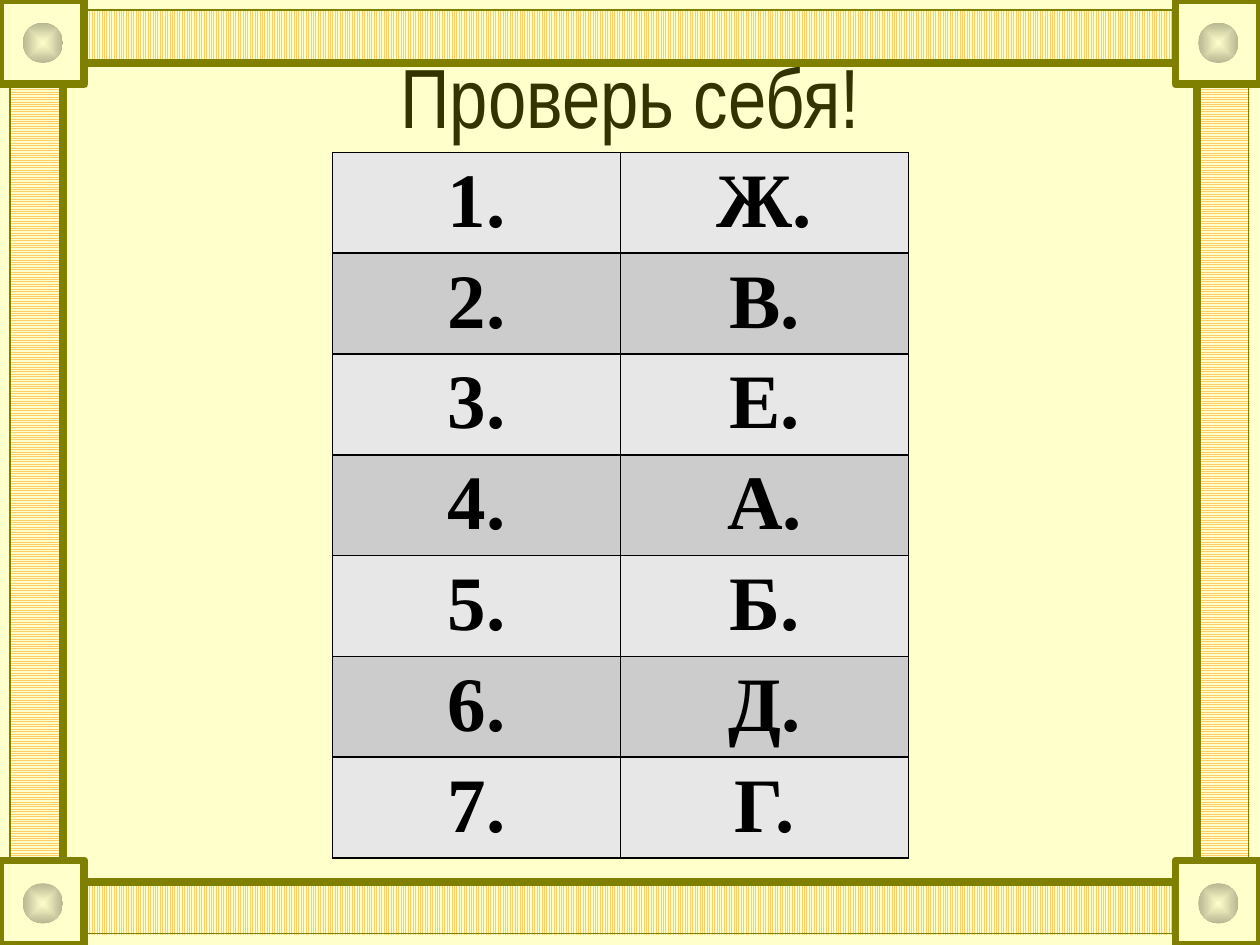
from itertools import product

from lxml.etree import SubElement
from pptx import Presentation
from pptx.dml.color import RGBColor
from pptx.enum.dml import MSO_PATTERN
from pptx.enum.shapes import MSO_SHAPE
from pptx.enum.text import MSO_ANCHOR, PP_ALIGN
from pptx.oxml import parse_xml
from pptx.oxml.ns import nsdecls, qn
from pptx.util import Inches, Pt

CREAM = RGBColor(0xFF, 0xFF, 0xCC)
SAND = RGBColor(0xFF, 0xCC, 0x66)
OLIVE = RGBColor(0x80, 0x80, 0x00)
DARK_OLIVE = RGBColor(0x33, 0x33, 0x00)
BLACK = RGBColor(0x00, 0x00, 0x00)
LIGHT_GREY = RGBColor(0xE7, 0xE7, 0xE7)
MID_GREY = RGBColor(0xCC, 0xCC, 0xCC)

WIDTH, HEIGHT = 10, 7.5
CORNER = 0.67
DOT = 0.32
DOT_INSET = 0.18
ANSWERS = ["Ж.", "В.", "Е.", "А.", "Б.", "Д.", "Г."]


def add_box(page, left, top, width, height, line_width=None, kind=MSO_SHAPE.RECTANGLE):
    """Add an unfilled shape, outlined in olive when a line width is given."""
    box = page.shapes.add_shape(
        kind, Inches(left), Inches(top), Inches(width), Inches(height))
    box.shadow.inherit = False
    box.fill.background()
    if line_width:
        box.line.color.rgb = OLIVE
        box.line.width = Pt(line_width)
    else:
        box.line.fill.background()
    return box


def add_strip(page, left, top, width, height, pattern):
    strip = add_box(page, left, top, width, height)
    strip.fill.patterned()
    strip.fill.pattern = pattern
    strip.fill.fore_color.rgb = SAND
    strip.fill.back_color.rgb = CREAM


def add_corner(page, left, top):
    """Add a corner square with a round stud, shaded from its centre."""
    square = add_box(page, left, top, CORNER, CORNER, 4.5)
    square.fill.solid()
    square.fill.fore_color.rgb = CREAM

    stud = add_box(page, left + DOT_INSET, top + DOT_INSET, DOT, DOT,
                   kind=MSO_SHAPE.OVAL)
    properties = stud.fill._xPr
    properties.replace(properties.find(qn("a:noFill")), parse_xml(
        f'<a:gradFill {nsdecls("a")} rotWithShape="1"><a:gsLst>'
        f'<a:gs pos="0"><a:srgbClr val="{CREAM}"/></a:gs>'
        f'<a:gs pos="100000"><a:srgbClr val="{CREAM}"><a:shade val="46275"/>'
        '</a:srgbClr></a:gs></a:gsLst><a:path path="shape">'
        '<a:fillToRect l="50000" t="50000" r="50000" b="50000"/>'
        '</a:path></a:gradFill>'))


def add_frame(page):
    for top in (0.08, 7):
        add_strip(page, 0.5, top, 9, 0.42, MSO_PATTERN.NARROW_VERTICAL)
    for left in (0.08, 9.5):
        add_strip(page, left, 0.5, 0.42, 6.5, MSO_PATTERN.NARROW_HORIZONTAL)
    add_box(page, 0.5, 0.5, 9, 6.5, 4.5)
    add_box(page, 0.08, 0.08, 9.83, 7.33, 1)
    for left, top in product((0, WIDTH - CORNER), (0, HEIGHT - CORNER)):
        add_corner(page, left, top)


def write(text_frame, text, size, font, color, bold=False):
    para = text_frame.paragraphs[0]
    para.alignment = PP_ALIGN.CENTER
    span = para.add_run()
    span.text = text
    span.font.size = Pt(size)
    span.font.name = font
    span.font.bold = bold
    span.font.color.rgb = color


def set_title(page, text):
    title = page.shapes.title
    title.left, title.top = Inches(0.75), Inches(0.13)
    title.width, title.height = Inches(8.5), Inches(1.25)
    title.text_frame.vertical_anchor = MSO_ANCHOR.MIDDLE
    write(title.text_frame, text, 48, "Arial Narrow", DARK_OLIVE)


def set_borders(cell):
    """Draw a thin black line on all four sides; call before setting the fill."""
    properties = cell._tc.get_or_add_tcPr()
    for side in ("a:lnL", "a:lnR", "a:lnT", "a:lnB"):
        line = SubElement(properties, qn(side), w=str(Pt(1)))
        fill = SubElement(line, qn("a:solidFill"))
        SubElement(fill, qn("a:srgbClr"), val=str(BLACK))


def add_answer_table(page):
    count = len(ANSWERS)
    table = page.shapes.add_table(
        count, 2, Inches(2.64), Inches(1.21), Inches(4.57), Inches(0.8 * count)).table
    for index, answer in enumerate(ANSWERS):
        for column, text in enumerate((f"{index + 1}.", answer)):
            cell = table.cell(index, column)
            set_borders(cell)
            cell.fill.solid()
            cell.fill.fore_color.rgb = MID_GREY if index % 2 else LIGHT_GREY
            write(cell.text_frame, text, 44, "Times New Roman", BLACK, bold=True)


def main():
    deck = Presentation()
    deck.slide_width, deck.slide_height = Inches(WIDTH), Inches(HEIGHT)
    page = deck.slides.add_slide(deck.slide_layouts[5])
    page.background.fill.solid()
    page.background.fill.fore_color.rgb = CREAM

    # Decorative border, heading and answer key
    add_frame(page)
    set_title(page, "Проверь себя!")
    add_answer_table(page)
    deck.save("out.pptx")


if __name__ == "__main__":
    main()
